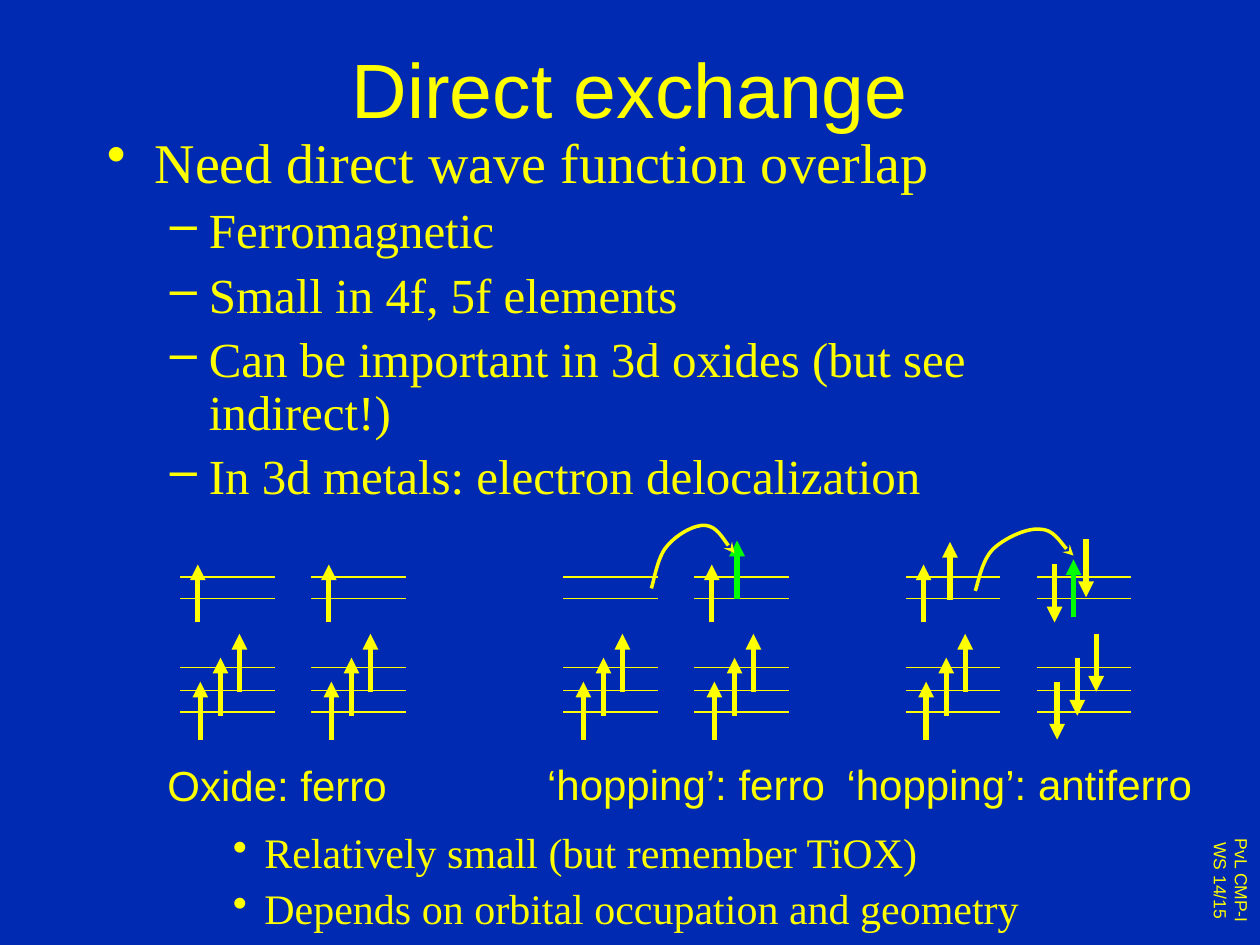
from lxml import etree
from pptx import Presentation, util as u
from pptx.dml.color import RGBColor
from pptx.enum import shapes, text
from pptx.oxml import ns

COLORS = {"background": "002AB2", "yellow": "FFFF00", "green": "00FF00"}


def write(frame, content, size, font="Arial", align=text.PP_ALIGN.CENTER, new=False,
          bullet=None, indent=0, hang=0, before=0, spacing=None):
    paragraph = frame.add_paragraph() if new else frame.paragraphs[0]
    paragraph.alignment = align
    paragraph.space_before = u.Pt(before)
    paragraph.line_spacing = spacing
    run = paragraph.add_run()
    run.text = content
    run.font.size = u.Pt(size)
    run.font.name = font
    run.font.color.rgb = RGBColor.from_string(COLORS["yellow"])
    if bullet:
        properties = paragraph._p.get_or_add_pPr()
        properties.set("marL", str(u.Inches(indent)))
        properties.set("indent", str(-u.Inches(hang)))
        etree.SubElement(properties, ns.qn("a:buChar")).set("char", bullet)


def draw_line(x1, y1, x2, y2, width=0.75, color="yellow", head=None):
    line = slide.shapes.add_connector(
        shapes.MSO_CONNECTOR.STRAIGHT, *[u.Inches(value) for value in (x1, y1, x2, y2)])
    line.line.width = u.Pt(width)
    line.line.color.rgb = RGBColor.from_string(COLORS[color])
    etree.SubElement(line._element.spPr, ns.qn("a:effectLst"))
    if head:
        etree.SubElement(line.line._get_or_add_ln(), ns.qn("a:tailEnd")).set("type", head)


presentation = Presentation()
presentation.slide_width = u.Inches(10)
presentation.slide_height = u.Inches(7.5)
slide = presentation.slides.add_slide(presentation.slide_layouts[5])
slide.background.fill.solid()
slide.background.fill.fore_color.rgb = RGBColor.from_string(COLORS["background"])

title = slide.shapes.title
title.left, title.top = u.Inches(0.75), u.Inches(0.07)
title.width, title.height = u.Inches(8.5), u.Inches(1.25)
title.text_frame.vertical_anchor = text.MSO_ANCHOR.MIDDLE
write(title.text_frame, "Direct exchange", 44)

body = slide.shapes.add_textbox(u.Inches(0.75), u.Inches(1.02), u.Inches(8.5), u.Inches(5.93))
body.text_frame.word_wrap = True
levels = [
    {"size": 32, "bullet": "•", "indent": 0.38, "hang": 0.38},
    {"size": 28, "bullet": "–", "indent": 0.81, "hang": 0.31},
    {"size": 24, "bullet": "•", "indent": 1.25, "hang": 0.25},
]
points = [
    (0, "Need direct wave function overlap", 0),
    (1, "Ferromagnetic", 6.5),
    (1, "Small in 4f, 5f elements", 6.5),
    (1, "Can be important in 3d oxides (but see indirect!)", 6.5),
    (1, "In 3d metals: electron delocalization", 6.5),
    (2, "Relatively small (but remember TiOX)", 187),
    (2, "Depends on orbital occupation and geometry", 6),
]
for number, (level, content, before) in enumerate(points):
    write(body.text_frame, content, font="Times New Roman", align=text.PP_ALIGN.LEFT,
          new=number > 0, before=before, spacing=0.9, **levels[level])

spin_length = 0.46
upper_spin = (0.14, 4.48)
lower_spins = [(0.16, 5.41), (0.32, 5.22), (0.47, 5.03)]
sites = [(1.43, True, True), (2.47, True, True), (4.47, True, False),
         (5.51, True, True), (7.19, True, True), (8.23, False, True)]
spins = [(5.85, 4.29, True, "green"), (7.54, 4.3, True, "yellow"),
         (8.52, 4.44, True, "green"), (8.62, 4.28, False, "yellow")]
for left, up, occupied in sites:
    for y in (4.58, 4.75, 5.3, 5.48, 5.65):
        draw_line(left, y, left + 0.75, y)
    for offset, top in lower_spins + [upper_spin] * occupied:
        spins.append((left + offset, top, up, "yellow"))
for x, top, up, color in spins:
    start, end = (top + spin_length, top) if up else (top, top + spin_length)
    draw_line(x, start, x, end, 3, color, "triangle")

labels = [
    ("Oxide: ferro", 1.22, 5.98, 1.96),
    ("‘hopping’: ferro", 4.23, 5.97, 2.43),
    ("‘hopping’: antiferro", 6.6, 5.97, 2.98),
]
for content, left, top, width in labels:
    label = slide.shapes.add_textbox(
        u.Inches(left), u.Inches(top), u.Inches(width), u.Inches(0.5))
    label.text_frame.word_wrap = False
    write(label.text_frame, content, 24)

hops = [
    [(5.17, 4.67), (5.19, 4.61), (5.22, 4.42), (5.29, 4.34), (5.36, 4.25),
     (5.51, 4.16), (5.6, 4.17), (5.69, 4.18), (5.78, 4.34), (5.83, 4.39)],
    [(7.74, 4.69), (7.76, 4.64), (7.79, 4.45), (7.88, 4.36), (7.96, 4.28),
     (8.14, 4.19), (8.25, 4.2), (8.36, 4.2), (8.46, 4.37), (8.52, 4.41)],
]
for hop in hops:
    builder = slide.shapes.build_freeform(*hop[0], scale=u.Inches(1))
    builder = slide.shapes.build_freeform(
        u.Inches(hop[0][0]), u.Inches(hop[0][1]))
    builder.add_line_segments([(u.Inches(x), u.Inches(y)) for x, y in hop[1:]], close=False)
    arrow = builder.convert_to_shape()
    arrow.shadow.inherit = False
    arrow.fill.background()
    arrow.line.width = u.Pt(2)
    arrow.line.color.rgb = RGBColor.from_string(COLORS["yellow"])
    etree.SubElement(arrow.line._get_or_add_ln(), ns.qn("a:tailEnd")).set("type", "stealth")
    outline = arrow._element.find(".//" + ns.qn("a:path"))
    segments = outline.findall(ns.qn("a:lnTo"))
    for first in range(0, len(segments), 3):
        curve = etree.SubElement(outline, ns.qn("a:cubicBezTo"))
        for segment in segments[first:first + 3]:
            curve.append(segment[0])
            outline.remove(segment)

course = slide.shapes.add_textbox(u.Inches(9.45), u.Inches(6.6), u.Inches(0.54), u.Inches(0.78))
course.text_frame.word_wrap = False
course.text_frame._txBody.bodyPr.set("vert", "vert")
write(course.text_frame, "PvL CMP-I", 10)
write(course.text_frame, "WS 14/15", 10, new=True)

presentation.save("out.pptx")
